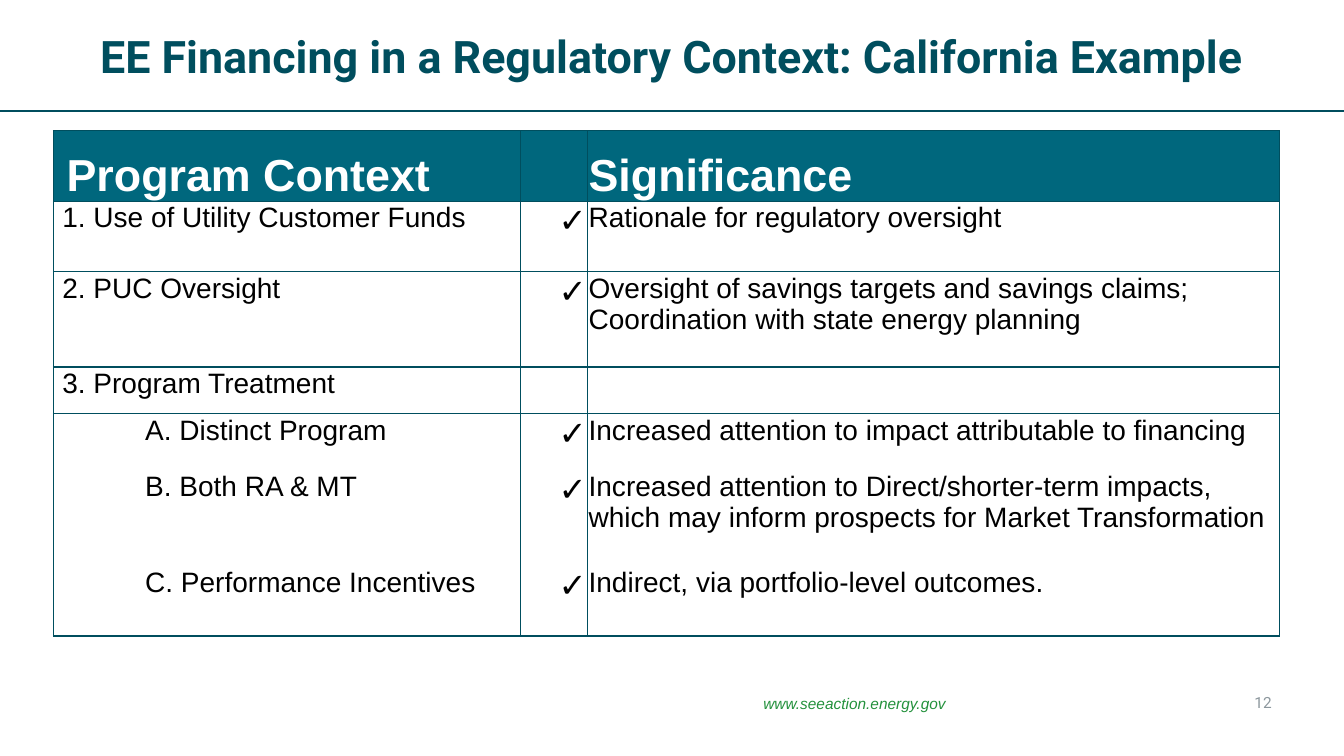
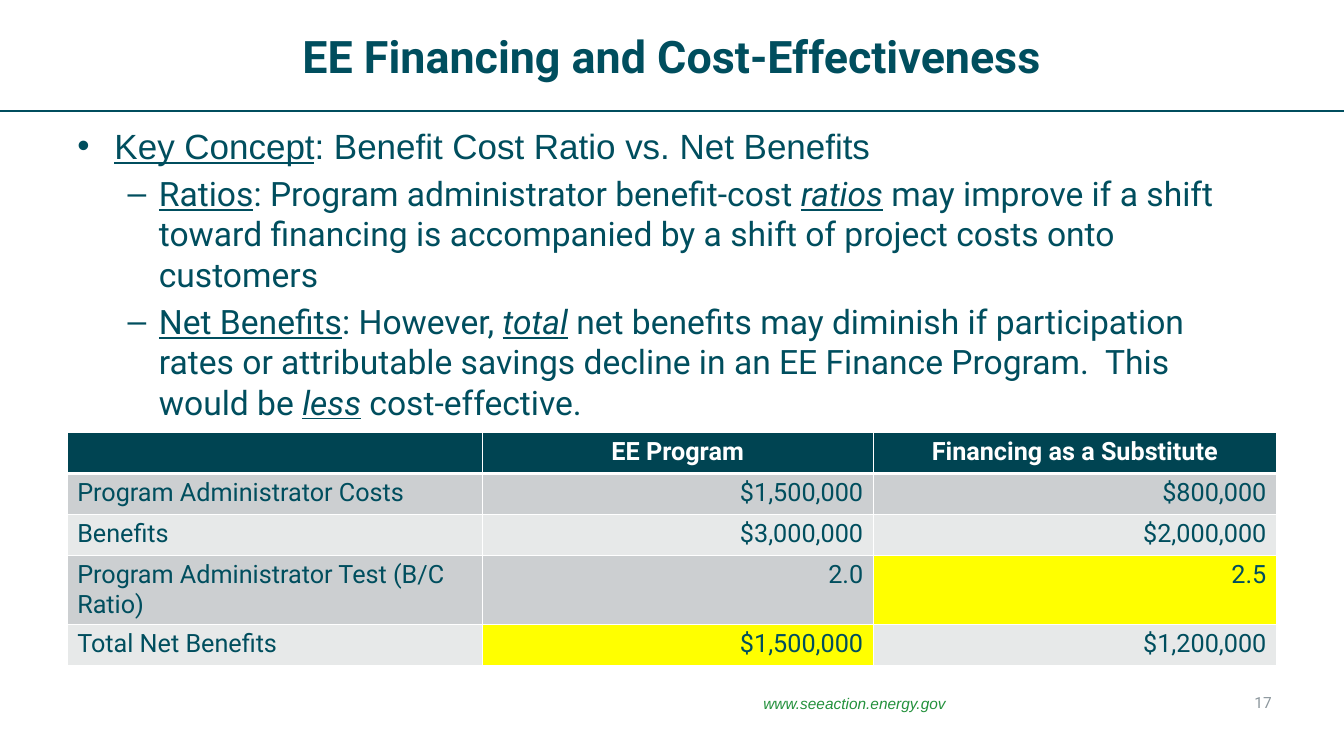
import pptx
import pptx.dml.color
import pptx.enum.shapes
import pptx.enum.text
import pptx.oxml
import pptx.oxml.ns
import pptx.util
from lxml import etree

Pt = pptx.util.Pt
ALIGN = pptx.enum.text.PP_ALIGN
ANCHOR = pptx.enum.text.MSO_ANCHOR
qn = pptx.oxml.ns.qn

COLOURS = {
    "ink": "004E5E", "teal": "00677D", "header": "004452", "green": "23913C",
    "number": "8C979D", "black": "000000", "white": "FFFFFF",
    "band": "CCCFD1", "light": "E7E9E9", "yellow": "FFFF00",
}
PAGE_WIDTH, PAGE_HEIGHT, TITLE_HEIGHT = 960, 540, 79.2
PLAIN_TABLE = "{2D5ABB26-0587-4C30-8999-92F81FD0307C}"
TITLE_ONLY, TITLE_AND_BODY = 5, 1


def rgb(name):
    return pptx.dml.color.RGBColor.from_string(COLOURS[name])


def style(paragraph, size, font, colour, bold=False, italic=False, align=ALIGN.LEFT):
    paragraph.alignment = align
    face = paragraph.font
    face.size, face.name, face.bold, face.italic = Pt(size), font, bold, italic
    face.color.rgb = rgb(colour)


def draw_borders(cell, widths, colour):
    """Draw the sides named in widths, a dict from L, R, T or B to points."""
    properties = cell._tc.get_or_add_tcPr()
    for side in "LRTB":
        if side in widths:
            line = etree.SubElement(properties, qn(f"a:ln{side}"), w=str(Pt(widths[side])))
            solid = etree.SubElement(line, qn("a:solidFill"))
            etree.SubElement(solid, qn("a:srgbClr"), val=COLOURS[colour])


class Deck:
    def __init__(self):
        self.deck = pptx.Presentation()
        self.deck.slide_width, self.deck.slide_height = Pt(PAGE_WIDTH), Pt(PAGE_HEIGHT)
        self.page = None

    def add_page(self, layout, title, number):
        self.page = self.deck.slides.add_slide(self.deck.slide_layouts[layout])
        self.rule(TITLE_HEIGHT)
        box = self.page.shapes.title
        self.place(box, 0, 0, PAGE_WIDTH, TITLE_HEIGHT)
        frame = box.text_frame
        frame.text, frame.vertical_anchor = title, ANCHOR.MIDDLE
        style(frame.paragraphs[0], 32, "Roboto", "ink", bold=True, align=ALIGN.CENTER)
        self.label("www.seeaction.energy.gov", 465, 492.5, 291, 20, ANCHOR.TOP,
                   font="Arial", colour="green", italic=True, align=ALIGN.CENTER)
        self.label(str(number), 691, 487, 224, 29, ANCHOR.MIDDLE,
                   font="Roboto", colour="number", align=ALIGN.RIGHT)

    def place(self, box, left, top, width, height):
        box.left, box.top, box.width, box.height = Pt(left), Pt(top), Pt(width), Pt(height)
        box.text_frame.word_wrap = True
        box.text_frame.auto_size = pptx.enum.text.MSO_AUTO_SIZE.NONE

    def rule(self, top):
        line = self.page.shapes.add_connector(
            pptx.enum.shapes.MSO_CONNECTOR.STRAIGHT, 0, Pt(top), Pt(PAGE_WIDTH), Pt(top))
        line.line.color.rgb, line.line.width = rgb("ink"), Pt(1)
        etree.SubElement(line._element.spPr, qn("a:effectLst"))

    def label(self, text, left, top, width, height, anchor, **look):
        box = self.page.shapes.add_textbox(0, 0, 0, 0)
        self.place(box, left, top, width, height)
        frame = box.text_frame
        frame.margin_left = frame.margin_right = Pt(6.5)
        frame.margin_top = frame.margin_bottom = Pt(3)
        frame.text, frame.vertical_anchor = text, anchor
        style(frame.paragraphs[0], 11, **look)

    def bullets(self, left, top, width, height, items):
        """Fill the body with (level, spans); a span is (text, marks), marks from "iu"."""
        looks = [("•", 26.6, -26.6, 25, "Arial"), ("–", 58.3, -22.3, 24, "Roboto")]
        box = self.page.placeholders[1]
        self.place(box, left, top, width, height)
        for index, (level, spans) in enumerate(items):
            frame = box.text_frame
            paragraph = frame.add_paragraph() if index else frame.paragraphs[0]
            mark, margin, indent, size, font = looks[level]
            paragraph.level = level
            paragraph.space_before = Pt(5 if index else 0)
            properties = paragraph._p.get_or_add_pPr()
            properties.set("marL", str(Pt(margin)))
            properties.set("indent", str(Pt(indent)))
            etree.SubElement(properties, qn("a:buChar"), char=mark)
            style(paragraph, size, font, "ink")
            for text, marks in spans:
                span = paragraph.add_run()
                span.text = text
                if "u" in marks:
                    span.font.underline = True
                if "i" in marks:
                    span.font.italic = True

    def table(self, left, top, widths, heights):
        frame = self.page.shapes.add_table(
            len(heights), len(widths), Pt(left), Pt(top), Pt(sum(widths)), Pt(sum(heights)))
        table = frame.table
        table.first_row = table.horz_banding = False
        table._tbl.tblPr.find(qn("a:tableStyleId")).text = PLAIN_TABLE
        for column, width in zip(table.columns, widths):
            column.width = Pt(width)
        for row, height in zip(table.rows, heights):
            row.height = Pt(height)
        return table

    def cell(self, cell, text, fill, borders, line, margins=(7.2, 7.2, 3.6, 3.6),
             anchor=ANCHOR.TOP, **look):
        draw_borders(cell, borders, line)
        if fill:
            cell.fill.solid()
            cell.fill.fore_color.rgb = rgb(fill)
        else:
            cell.fill.background()
        cell.margin_left, cell.margin_right, cell.margin_top, cell.margin_bottom = map(Pt, margins)
        cell.vertical_anchor = anchor
        if text:
            cell.text = text
            style(cell.text_frame.paragraphs[0], **look)


def build_context(deck):
    deck.add_page(TITLE_ONLY, "EE Financing in a Regulatory Context: California Example", 12)
    rows = [
        ("Program Context", "Significance"),
        ("1. Use of Utility Customer Funds", "Rationale for regulatory oversight"),
        ("2. PUC Oversight", "Oversight of savings targets and savings claims; "
                             "Coordination with state energy planning"),
        ("3. Program Treatment", ""),
        ("A. Distinct Program", "Increased attention to impact attributable to financing"),
        ("B. Both RA & MT", "Increased attention to Direct/shorter-term impacts, "
                            "which may inform prospects for Market Transformation"),
        ("C. Performance Incentives", "Indirect, via portfolio-level outcomes."),
    ]
    first_treatment, last = 3, len(rows) - 1
    table = deck.table(38.2, 93.4, [333.4, 48.2, 494], [50.4, 50.4, 68, 33.4, 40, 68.6, 50.2])
    for index, (context, significance) in enumerate(rows):
        header = index == 0
        check = "✓" if significance and not header else ""
        indent = 9.4 if header else 65.5 if index > first_treatment else 6.3
        across = {}
        if index <= first_treatment:
            across["T"] = 1
        if index < first_treatment or index == last:
            across["B"] = 1
        columns = [
            (context, indent, {"L": 1, "R": 1}, 20, ALIGN.LEFT),
            (check, 0.7, {"L": 1}, 24, ALIGN.RIGHT),
            (significance, 0.7, {"R": 1}, 20, ALIGN.LEFT),
        ]
        for column, (text, margin, sides, size, align) in enumerate(columns):
            deck.cell(table.cell(index, column), text, "teal" if header else None,
                      sides | across, "ink", margins=(margin, 0.7, 0.7, 0),
                      anchor=ANCHOR.BOTTOM if header else ANCHOR.TOP,
                      size=32 if header else size, font="Arial", bold=header,
                      colour="white" if header else "black", align=align)


def build_cost_effectiveness(deck):
    deck.add_page(TITLE_AND_BODY, "EE Financing and Cost-Effectiveness", 17)
    deck.bullets(48, 85, 864, 222, [
        (0, [("Key Concept", "u"), (": Benefit Cost Ratio vs. Net Benefits", "")]),
        (1, [("Ratios", "u"), (": Program administrator benefit-cost ", ""), ("ratios", "iu"),
             (" may improve if a shift toward financing is accompanied by a shift of "
              "project costs onto customers", "")]),
        (1, [("Net Benefits", "u"), (": However, ", ""), ("total", "iu"),
             (" net benefits may diminish if participation rates or attributable savings "
              "decline in an EE Finance Program.  This would be ", ""),
             ("less", "iu"), (" cost-effective.", "")]),
    ])
    rows = [
        ("", "EE Program", "Financing as a Substitute"),
        ("Program Administrator Costs", "$1,500,000", "$800,000"),
        ("Benefits", "$3,000,000", "$2,000,000"),
        ("Program Administrator Test (B/C Ratio)", "2.0", "2.5"),
        ("Total Net Benefits", "$1,500,000", "$1,200,000"),
    ]
    better = {(3, 2), (4, 1)}
    table = deck.table(48, 309, [296.4, 279.4, 288], [29.2, 29.2, 29.2, 49.4, 29.2])
    for index, row in enumerate(rows):
        header = index == 0
        fill = "header" if header else "band" if index % 2 else "light"
        borders = {"L": 1, "R": 1, "T": 3 if index == 1 else 1, "B": 3 if header else 1}
        for column, text in enumerate(row):
            align = ALIGN.CENTER if header else ALIGN.RIGHT if column else ALIGN.LEFT
            deck.cell(table.cell(index, column), text,
                      "yellow" if (index, column) in better else fill, borders, "white",
                      size=18, font="Roboto", bold=header,
                      colour="white" if header else "ink", align=align)


def main():
    deck = Deck()
    build_context(deck)
    build_cost_effectiveness(deck)
    deck.deck.save("out.pptx")


if __name__ == "__main__":
    main()
